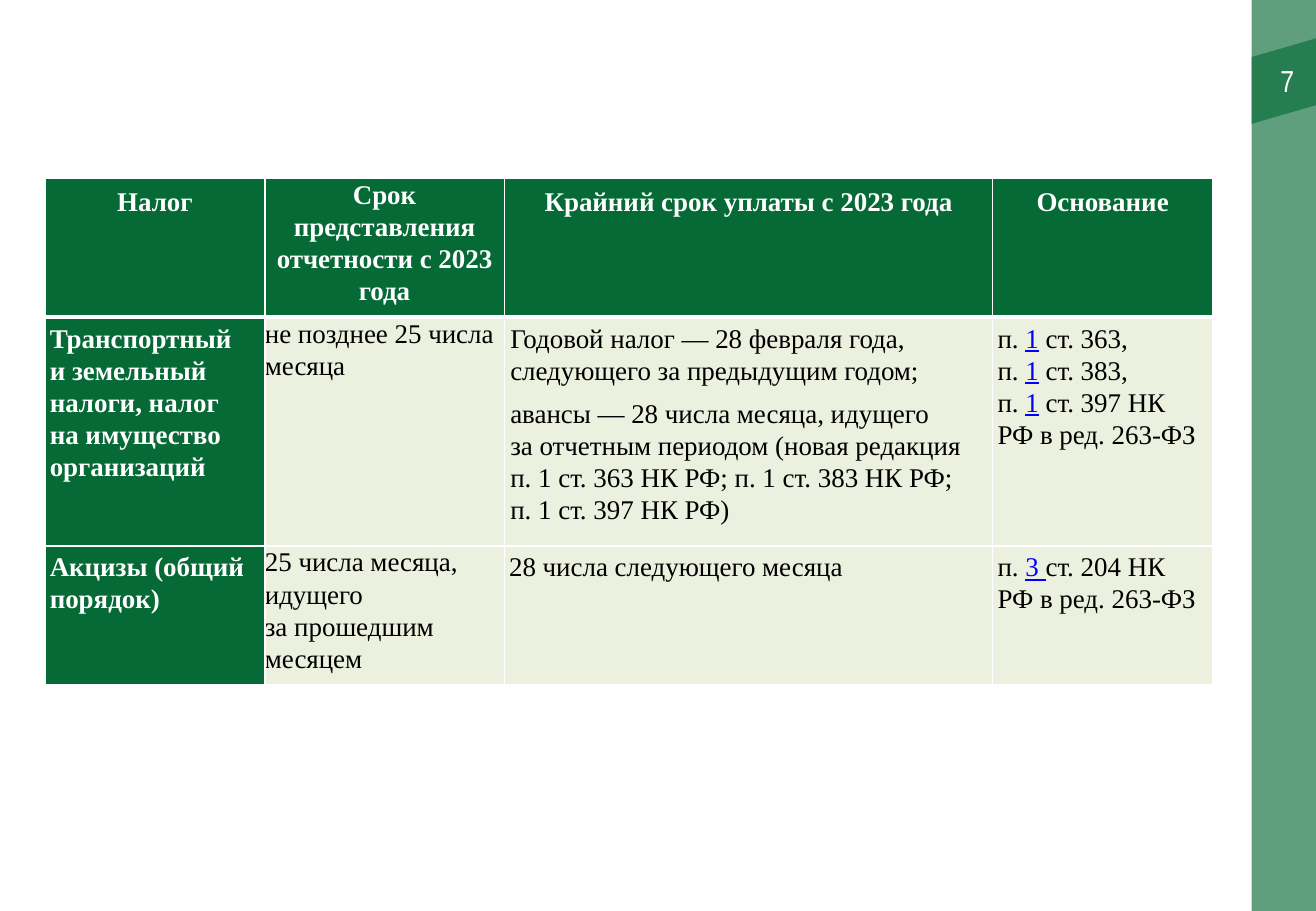
from lxml.etree import SubElement
from pptx import Presentation
from pptx.dml.color import RGBColor
from pptx.enum.shapes import MSO_SHAPE
from pptx.enum.text import MSO_ANCHOR, PP_ALIGN
from pptx.oxml.ns import qn
from pptx.util import Inches, Pt

COLORS = {"green": "066A36", "pale": "EBF1DE", "white": "FFFFFF", "black": "000000", "link": "0000FF"}
NBSP = chr(160)


def add_text(p, text, font="Times New Roman", size=16, color="black", bold=False,
             align=PP_ALIGN.LEFT, spacing=None, after=0):
    p.alignment = align
    p.line_spacing = spacing
    p.space_after = Pt(after)
    for i, part in enumerate(text.replace("~", NBSP).split("|")):
        linked = i % 2 == 1
        r = p.add_run()
        r.text = part
        r.font.name = font
        r.font.size = Pt(size)
        r.font.bold = bold
        r.font.underline = linked
        r.font.color.rgb = RGBColor.from_string(COLORS["link" if linked else color])


def add_border(cell, side, width):
    ln = SubElement(cell._tc.get_or_add_tcPr(), qn(f"a:ln{side}"), w=str(Pt(width)))
    fill = SubElement(ln, qn("a:solidFill"))
    SubElement(fill, qn("a:srgbClr"), val=COLORS["white"])


prs = Presentation()
prs.slide_width = Inches(10.83)
prs.slide_height = Inches(7.5)
s = prs.slides.add_slide(prs.slide_layouts[6])

band = s.shapes.add_shape(MSO_SHAPE.RECTANGLE, Inches(10.3), 0, Inches(0.55), Inches(7.5))
fb = s.shapes.build_freeform(Inches(10.3), Inches(0.47))
fb.add_line_segments([(Inches(x), Inches(y)) for x, y in [(10.85, 0.31), (10.85, 0.86), (10.3, 1.02)]])
ribbon = fb.convert_to_shape()
for sp in (band, ribbon):
    sp.shadow.inherit = False
    sp.line.fill.background()
    sp.fill.solid()
    sp.fill.fore_color.rgb = RGBColor.from_string(COLORS["green"])
    clr = sp._element.spPr.find(qn("a:solidFill")).find(qn("a:srgbClr"))
    SubElement(clr, qn("a:alpha"), val="64000")

number = s.shapes.add_textbox(Inches(9.98), Inches(0.46), Inches(0.79), Inches(0.4))
tf = number.text_frame
tf.word_wrap = True
tf.vertical_anchor = MSO_ANCHOR.MIDDLE
tf.margin_left = tf.margin_right = Inches(0.12)
tf.margin_top = tf.margin_bottom = Inches(0.06)
add_text(tf.paragraphs[0], "7", font="Arial Narrow", size=18, color="white", align=PP_ALIGN.RIGHT)

rows = [
    [["Налог"], ["Срок представления отчетности с~2023 года"],
     ["Крайний срок уплаты с~2023 года"], ["Основание"]],
    [["Транспортный и~земельный налоги, налог на~имущество организаций"],
     ["не позднее 25 числа месяца"],
     ["Годовой налог~— 28~февраля года, следующего за~предыдущим годом;",
      "авансы~— 28 числа месяца, идущего за~отчетным периодом (новая редакция "
      "п.~1 ст. 363 НК РФ; п.~1 ст. 383 НК РФ; п.~1 ст. 397 НК РФ)"],
     ["п.~|1|~ст. 363, п.~|1|~ст. 383, п.~|1|~ст. 397 НК РФ в~ред. 263-ФЗ"]],
    [["Акцизы (общий порядок)"], ["25 числа месяца, идущего за~прошедшим месяцем"],
     ["28 числа следующего месяца"], ["п.~|3~|ст. 204 НК РФ в~ред. 263-ФЗ"]],
]
widths = [1.81, 1.97, 4.02, 1.81]
heights = [1.05, 1.76, 1.14]

table = s.shapes.add_table(len(rows), len(widths), Inches(0.37), Inches(1.47),
                           Inches(sum(widths)), Inches(sum(heights))).table
for col, width in zip(table.columns, widths):
    col.width = Inches(width)
for row, height in zip(table.rows, heights):
    row.height = Inches(height)

for i, row in enumerate(rows):
    for j, paragraphs in enumerate(row):
        cell = table.cell(i, j)
        header = i == 0
        dark = header or j == 0
        side_margin, top_margin = (0, 0) if j == 1 else (0.05, 0.06) if header else (0.04, 0.04)
        cell.margin_left = cell.margin_right = Inches(side_margin)
        cell.margin_top = cell.margin_bottom = Inches(top_margin)
        for side in "LRTB":
            thick = (i == 0 and side == "B") or (i == 1 and side == "T")
            add_border(cell, side, 3 if thick else 1)
        cell.fill.solid()
        cell.fill.fore_color.rgb = RGBColor.from_string(COLORS["green" if dark else "pale"])
        tf = cell.text_frame
        for k, text in enumerate(paragraphs):
            p = tf.paragraphs[0] if k == 0 else tf.add_paragraph()
            if len(paragraphs) > 1:
                p._p.get_or_add_pPr().set("marL", str(Inches(0.01)))
            add_text(p, text, color="white" if dark else "black", bold=dark,
                     align=PP_ALIGN.CENTER if header else PP_ALIGN.LEFT, spacing=1.07,
                     after=6.7 if k < len(paragraphs) - 1 else 0)

prs.save("out.pptx")
